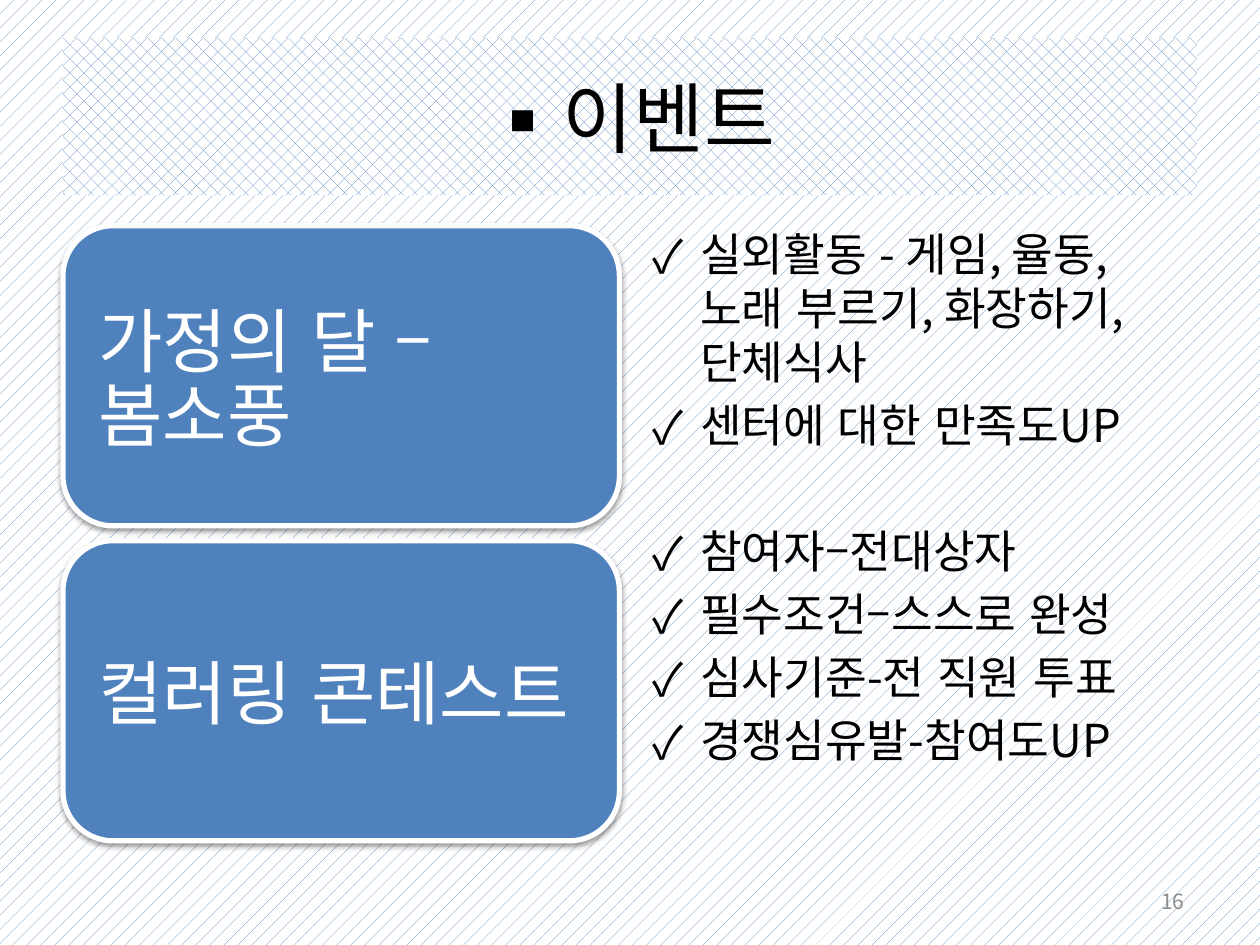
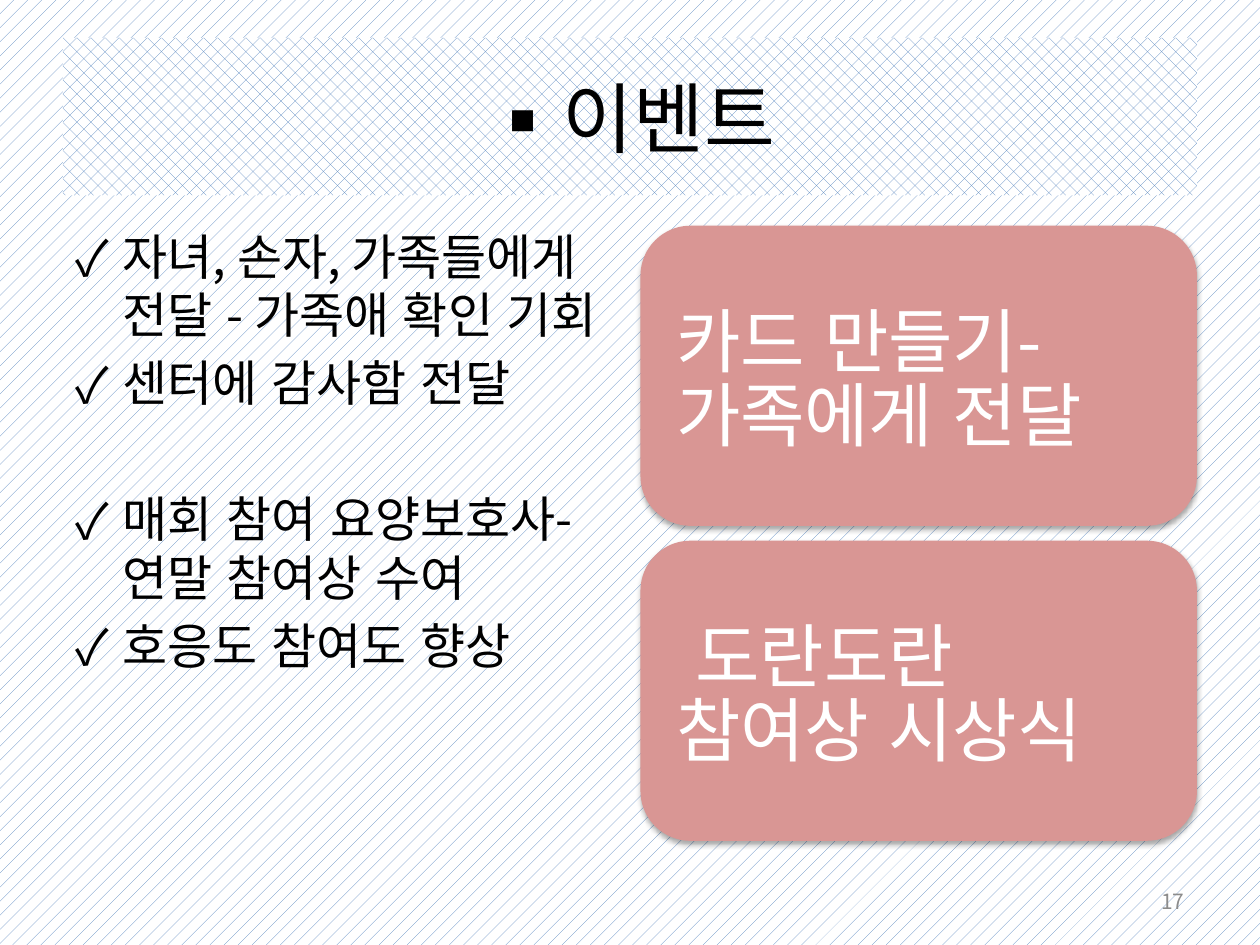
from dataclasses import dataclass
from lxml.etree import SubElement
from pptx import Presentation
from pptx.dml.color import RGBColor
from pptx.enum.dml import MSO_PATTERN
from pptx.enum.lang import MSO_LANGUAGE_ID
from pptx.enum.shapes import MSO_SHAPE
from pptx.enum.text import MSO_ANCHOR, PP_ALIGN
from pptx.oxml.ns import qn
from pptx.util import Pt

TITLE = "이벤트"
# Each body is a list of groups; a wide gap parts the groups.
SLIDES = [
    dict(page="16", side="left", fill="4F81BD", edge="FFFFFF", size=25.9,
         alpha=38, drop=1.6,
         cards=["가정의 달 – 봄소풍", "컬러링 콘테스트"],
         body=[["실외활동 - 게임, 율동, 노래 부르기, 화장하기,단체식사",
                "센터에 대한 만족도UP"],
               ["참여자–전대상자", "필수조건–스스로 완성",
                "심사기준-전 직원 투표", "경쟁심유발-참여도UP"]]),
    dict(page="17", side="right", fill="D99694", edge=None, size=28,
         alpha=35, drop=1.8,
         cards=["카드 만들기-가족에게 전달", " 도란도란 참여상 시상식"],
         body=[["자녀, 손자, 가족들에게 전달 - 가족애 확인 기회",
                "센터에 감사함 전달"],
               ["매회 참여 요양보호사- 연말 참여상 수여",
                "호응도 참여도 향상"]]),
]


@dataclass(frozen=True)
class Theme:
    font: str = "Noto Sans CJK KR"
    ink: str = "000000"
    paper: str = "FFFFFF"
    blue: str = "4F81BD"
    grey: str = "8C8C8C"
    title: float = 44
    card: float = 40
    page: float = 12
    pitch: float = 1.19   # line height, in ems
    tight: float = 0.9    # card line spacing
    gap: float = 0.2      # space before a paragraph, in ems


T = Theme()
COLS = {"left": 36, "right": 366}
WIDE = 318
CARD_TOP, CARD_TALL, CARD_STEP = 129, 171.5, 180


def rgb(hue):
    return RGBColor.from_string(hue)


def weave(fill, kind):
    fill.patterned()
    fill.pattern = kind
    fill.fore_color.rgb = rgb(T.blue)
    fill.back_color.rgb = rgb(T.paper)


def write(par, text, size, hue):
    run = par.add_run()
    run.text = text
    font = run.font
    font.name, font.size = T.font, Pt(size)
    font.color.rgb = rgb(hue)
    font.language_id = MSO_LANGUAGE_ID.KOREAN
    SubElement(run._r.get_or_add_rPr(), qn("a:ea"), typeface=T.font)


def bullet(par, mark, indent):
    props = par._p.get_or_add_pPr()
    props.set("marL", str(Pt(indent)))
    props.set("indent", str(-Pt(indent)))
    SubElement(props, qn("a:buFont"), typeface=T.font)
    SubElement(props, qn("a:buChar"), char=mark)


def shade(shape, alpha, drop):
    """Give the shape a soft shadow that falls straight down."""
    shape.shadow.inherit = False
    list_ = shape._element.spPr.find(qn("a:effectLst"))
    outer = SubElement(list_, qn("a:outerShdw"), blurRad=str(Pt(3.1)),
                       dist=str(Pt(drop)), dir="5400000", rotWithShape="0")
    hue = SubElement(outer, qn("a:srgbClr"), val=T.ink)
    SubElement(hue, qn("a:alpha"), val=str(alpha * 1000))


def add_text(slide, *place):
    frame = slide.shapes.add_textbox(*map(Pt, place)).text_frame
    frame.word_wrap = True
    return frame


def add_base(slide, page):
    """Lay down the ground, title band and page number."""
    weave(slide.background.fill, MSO_PATTERN.PERCENT_10)
    band = slide.shapes.add_shape(
        MSO_SHAPE.RECTANGLE, *map(Pt, (36, 21.6, 648, 90)))
    band.shadow.inherit = False
    weave(band.fill, MSO_PATTERN.PERCENT_25)
    band.line.fill.background()
    band.text_frame.vertical_anchor = MSO_ANCHOR.MIDDLE
    par = band.text_frame.paragraphs[0]
    par.alignment = PP_ALIGN.CENTER
    bullet(par, "▪", 45)
    write(par, TITLE, T.title, T.ink)

    frame = add_text(slide, 516, 500.5, 168, 28.75)
    frame.vertical_anchor = MSO_ANCHOR.MIDDLE
    par = frame.paragraphs[0]
    par.alignment = PP_ALIGN.RIGHT
    write(par, page, T.page, T.grey)


def add_body(slide, left, groups, size):
    frame = add_text(slide, left, 126, WIDE, 356.4)
    line, gap = size * T.pitch, size * T.gap
    par = None
    for g, group in enumerate(groups):
        for i, text in enumerate(group):
            par = frame.add_paragraph() if par else frame.paragraphs[0]
            apart = g > 0 and i == 0
            par.line_spacing = Pt(line)
            par.space_before = Pt(gap + (line + gap if apart else 0))
            bullet(par, "✓", 27)
            write(par, text, size, T.ink)


def add_card(slide, left, top, text, look):
    card = slide.shapes.add_shape(
        MSO_SHAPE.ROUNDED_RECTANGLE, *map(Pt, (left, top, WIDE, CARD_TALL)))
    card.fill.solid()
    card.fill.fore_color.rgb = rgb(look["fill"])
    if look["edge"]:
        card.line.color.rgb = rgb(look["edge"])
        card.line.width = Pt(3)
    else:
        card.line.fill.background()
    shade(card, look["alpha"], look["drop"])
    frame = card.text_frame
    frame.word_wrap = True
    frame.vertical_anchor = MSO_ANCHOR.MIDDLE
    frame.margin_left = frame.margin_right = frame.margin_bottom = Pt(12)
    frame.margin_top = Pt(18)
    par = frame.paragraphs[0]
    par.alignment = PP_ALIGN.LEFT
    par.line_spacing = Pt(T.card * T.pitch * T.tight)
    write(par, text, T.card, T.paper)


def main():
    deck = Presentation()
    deck.slide_width, deck.slide_height = Pt(720), Pt(540)
    for item in SLIDES:
        slide = deck.slides.add_slide(deck.slide_layouts[6])
        add_base(slide, item["page"])
        other = "right" if item["side"] == "left" else "left"
        add_body(slide, COLS[other], item["body"], item["size"])
        for i, text in enumerate(item["cards"]):
            add_card(slide, COLS[item["side"]], CARD_TOP + i * CARD_STEP,
                     text, item)
    deck.save("out.pptx")


if __name__ == "__main__":
    main()
